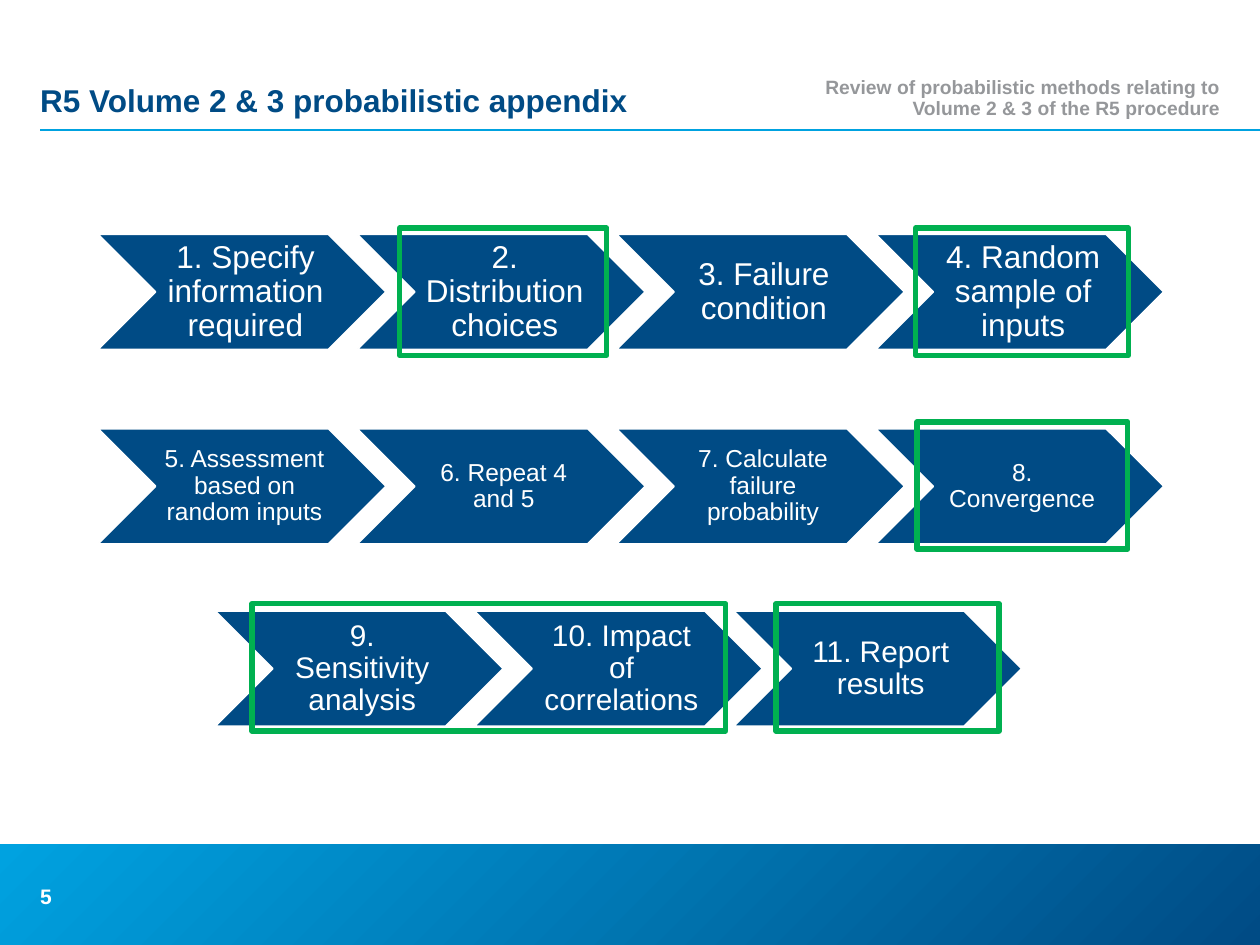
from pptx import Presentation
from pptx.dml.color import RGBColor
from pptx.enum.shapes import MSO_CONNECTOR as Link, MSO_SHAPE as Kind
from pptx.enum.text import MSO_ANCHOR as Anchor, PP_ALIGN as Align
from pptx.oxml.ns import qn
from pptx.util import Pt
from lxml.etree import SubElement

NAVY, CYAN, GREEN, GREY, WHITE = "004B85", "00A2E0", "00B050", "95979A", "FFFFFF"
WIDE, HIGH = 164.6, 65.8
STEP = WIDE * 0.9

ROWS = [
    (56, 133.9, 18, (5.8, 1.9), [
        "1. Specify information required", "2. Distribution choices",
        "3. Failure condition", "4. Random sample of inputs"]),
    (56, 245, 14, (4.4, 1.5), [
        "5. Assessment based on random inputs", "6. Repeat 4 and 5",
        "7. Calculate failure probability", "8. Convergence"]),
    (123, 349.2, 17, (5.3, 1.8), [
        "9. Sensitivity analysis", "10. Impact of correlations",
        "11. Report results"]),
]
MARKS = [
    (228.4, 130.3, 118.4),
    (523.2, 130.3, 121.7),
    (443.5, 345, 127.4),
    (144, 345, 270.7),
    (524, 241.1, 120.5),
]


def color(code):
    return RGBColor.from_string(code)


def write(shape, text, size, code, align, anchor, pads=(0, 0), bold=False, lead=0.9):
    frame = shape.text_frame
    frame.word_wrap = True
    frame.vertical_anchor = anchor
    frame.margin_left = Pt(pads[0])
    frame.margin_right = frame.margin_top = frame.margin_bottom = Pt(pads[1])
    frame.text = text
    para = frame.paragraphs[0]
    para.alignment = align
    para.line_spacing = lead
    font = para.runs[0].font
    font.name, font.size, font.bold = "Arial", Pt(size), bold
    font.color.rgb = color(code)


def label(slide, box, *args, **opts):
    write(slide.shapes.add_textbox(*map(Pt, box)), *args, bold=True, **opts)


def shape(slide, kind, box):
    item = slide.shapes.add_shape(kind, *map(Pt, box))
    item.shadow.inherit = False
    return item


def band(slide):
    item = shape(slide, Kind.RECTANGLE, (0, 482.4, 720, 57.6))
    item.line.fill.background()
    item.fill.gradient()
    item.fill.gradient_angle = 315
    for stop, code in zip(item.fill.gradient_stops, (CYAN, NAVY)):
        stop.color.rgb = color(code)


def rule(slide):
    line = slide.shapes.add_connector(Link.STRAIGHT, Pt(720), Pt(74.2), Pt(23), Pt(74.2))
    line.line.color.rgb = color(CYAN)
    line.line.width = Pt(1)
    SubElement(line._element.spPr, qn("a:effectLst"))


def step(slide, left, top, text, size, pads):
    item = shape(slide, Kind.CHEVRON, (left, top, WIDE, HIGH))
    item.fill.solid()
    item.fill.fore_color.rgb = color(NAVY)
    item.line.color.rgb = color(WHITE)
    item.line.width = Pt(1)
    write(item, text, size, WHITE, Align.CENTER, Anchor.MIDDLE, pads)


def mark(slide, left, top, width):
    item = shape(slide, Kind.RECTANGLE, (left, top, width, 72.7))
    item.fill.background()
    item.line.color.rgb = color(GREEN)
    item.line.width = Pt(3)


def main():
    deck = Presentation()
    deck.slide_width, deck.slide_height = Pt(720), Pt(540)
    slide = deck.slides.add_slide(deck.slide_layouts[6])
    band(slide)
    rule(slide)
    label(slide, (23, 24.5, 340.6, 43.9), "R5 Volume 2 & 3 probabilistic appendix",
          18, NAVY, Align.LEFT, Anchor.BOTTOM)
    label(slide, (457, 24.5, 240.3, 43.9),
          "Review of probabilistic methods relating to Volume 2 & 3 of the R5 procedure",
          11, GREY, Align.RIGHT, Anchor.BOTTOM)
    label(slide, (23, 506.2, 25.9, 12.2), "5", 12, WHITE, Align.LEFT, Anchor.MIDDLE, lead=1.0)
    for left, top, size, pads, texts in ROWS:
        for col, text in enumerate(texts):
            step(slide, left + col * STEP, top, text, size, pads)
    for spot in MARKS:
        mark(slide, *spot)
    deck.save("out.pptx")


if __name__ == "__main__":
    main()
